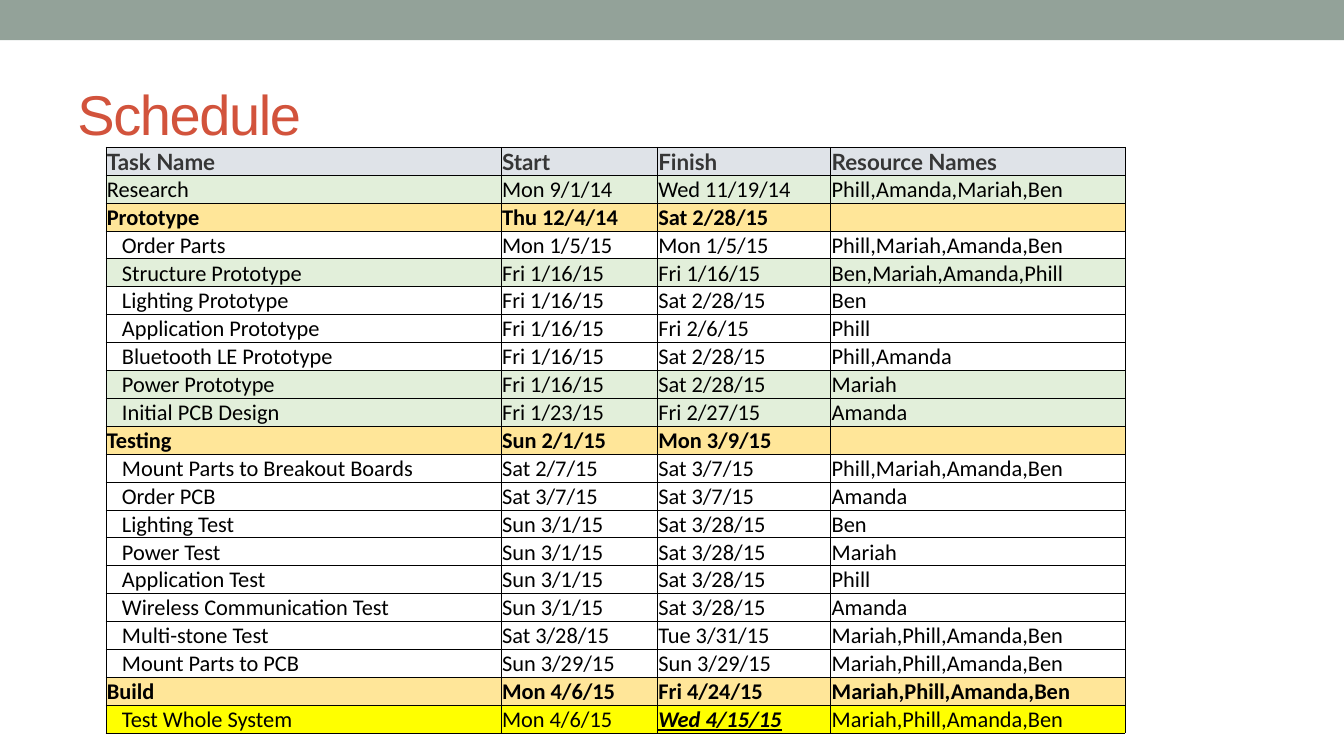
from dataclasses import dataclass

from lxml import etree
from pptx import Presentation
from pptx.dml.color import RGBColor
from pptx.enum.shapes import MSO_SHAPE
from pptx.enum.text import MSO_ANCHOR
from pptx.oxml.ns import qn
from pptx.util import Inches, Pt

RECT = MSO_SHAPE.RECTANGLE
MIDDLE = MSO_ANCHOR.MIDDLE

SAGE = RGBColor(0x93, 0xA2, 0x99)
RUST = RGBColor(0xD2, 0x53, 0x3C)
GRAY = RGBColor(0x36, 0x36, 0x36)
BLACK = RGBColor(0, 0, 0)
SILVER = RGBColor(0xDF, 0xE3, 0xE8)
GREEN = RGBColor(0xE2, 0xEF, 0xDA)
GOLD = RGBColor(0xFF, 0xE6, 0x99)
WHITE = RGBColor(0xFF, 0xFF, 0xFF)
YELLOW = RGBColor(0xFF, 0xFF, 0)

TEAM = "Mariah,Phill,Amanda,Ben"
PHILL_TEAM = "Phill,Mariah,Amanda,Ben"
WIDTHS = (3.92, 1.55, 1.72, 2.92)
PAD = 0.01
INDENT = 0.15


@dataclass(frozen=True)
class Task:
    name: str
    start: str
    finish: str
    people: str = ""
    fill: RGBColor = WHITE
    sub: bool = True
    bold: bool = False
    font: str = "Calibri"
    color: RGBColor = BLACK
    due: bool = False


def phase(name: str, start: str, finish: str, people: str = "") -> Task:
    return Task(name, start, finish, people, GOLD, sub=False, bold=True)


TASKS = (
    Task("Task Name", "Start", "Finish", "Resource Names", SILVER,
         sub=False, bold=True, font="Lato", color=GRAY),
    Task("Research", "Mon 9/1/14", "Wed 11/19/14", "Phill,Amanda,Mariah,Ben", GREEN, sub=False),
    phase("Prototype", "Thu 12/4/14", "Sat 2/28/15"),
    Task("Order Parts", "Mon 1/5/15", "Mon 1/5/15", PHILL_TEAM),
    Task("Structure Prototype", "Fri 1/16/15", "Fri 1/16/15", "Ben,Mariah,Amanda,Phill", GREEN),
    Task("Lighting Prototype", "Fri 1/16/15", "Sat 2/28/15", "Ben"),
    Task("Application Prototype", "Fri 1/16/15", "Fri 2/6/15", "Phill"),
    Task("Bluetooth LE Prototype", "Fri 1/16/15", "Sat 2/28/15", "Phill,Amanda"),
    Task("Power Prototype", "Fri 1/16/15", "Sat 2/28/15", "Mariah", GREEN),
    Task("Initial PCB Design", "Fri 1/23/15", "Fri 2/27/15", "Amanda", GREEN),
    phase("Testing", "Sun 2/1/15", "Mon 3/9/15"),
    Task("Mount Parts to Breakout Boards", "Sat 2/7/15", "Sat 3/7/15", PHILL_TEAM),
    Task("Order PCB", "Sat 3/7/15", "Sat 3/7/15", "Amanda"),
    Task("Lighting Test", "Sun 3/1/15", "Sat 3/28/15", "Ben"),
    Task("Power Test", "Sun 3/1/15", "Sat 3/28/15", "Mariah"),
    Task("Application Test", "Sun 3/1/15", "Sat 3/28/15", "Phill"),
    Task("Wireless Communication Test", "Sun 3/1/15", "Sat 3/28/15", "Amanda"),
    Task("Multi-stone Test", "Sat 3/28/15", "Tue 3/31/15", TEAM),
    Task("Mount Parts to PCB", "Sun 3/29/15", "Sun 3/29/15", TEAM),
    phase("Build", "Mon 4/6/15", "Fri 4/24/15", TEAM),
    Task("Test Whole System", "Mon 4/6/15", "Wed 4/15/15", TEAM, YELLOW, due=True),
)


def write(frame, text: str, *, size: int, font: str, color: RGBColor, bold: bool = False,
          accent: bool = False, space: int = 0) -> None:
    """Fill a text frame; accent means italic and underlined, space is in points."""
    para = frame.paragraphs[0]
    if not text:
        etree.SubElement(para._p, qn("a:endParaRPr"), sz=str(size * 100))
        return
    run = para.add_run()
    run.text = text
    style = run.font
    style.size, style.name, style.bold = Pt(size), font, bold
    style.italic = style.underline = accent
    style.color.rgb = color
    if space:
        run._r.get_or_add_rPr().set("spc", str(space * 100))


def outline(cell) -> None:
    """Draw a thin black border on all four sides; call it before the fill is set."""
    props = cell._tc.get_or_add_tcPr()
    for side in ("lnL", "lnR", "lnT", "lnB"):
        line = etree.SubElement(props, qn(f"a:{side}"), w=str(Pt(0.5)))
        fill = etree.SubElement(line, qn("a:solidFill"))
        etree.SubElement(fill, qn("a:srgbClr"), val=str(BLACK))


def fill_row(cells, task: Task) -> None:
    texts = (task.name, task.start, task.finish, task.people)
    for col, (cell, text) in enumerate(zip(cells, texts)):
        due = task.due and col == 2
        left = INDENT if task.sub and col == 0 else 0
        cell.margin_left = Inches(PAD + left)
        cell.margin_right = cell.margin_top = Inches(PAD)
        cell.margin_bottom = 0
        cell.vertical_anchor = MIDDLE
        outline(cell)
        cell.fill.solid()
        cell.fill.fore_color.rgb = task.fill
        write(cell.text_frame, text, size=16, font=task.font, color=task.color,
              bold=task.bold or due, accent=due)


def add_band(slide) -> None:
    band = slide.shapes.add_shape(RECT, 0, 0, Inches(13.33), Inches(0.4))
    band.shadow.inherit = False
    band.fill.solid()
    band.fill.fore_color.rgb = SAGE
    band.line.fill.background()


def add_title(slide) -> None:
    box = slide.shapes.add_textbox(Inches(0.67), Inches(0.58), Inches(12), Inches(1.08))
    frame = box.text_frame
    frame.word_wrap = True
    frame.vertical_anchor = MIDDLE
    write(frame, "Schedule", size=40, font="Arial", color=RUST, space=-1)


def add_plan(slide) -> None:
    table = slide.shapes.add_table(len(TASKS), len(WIDTHS), Inches(1.05), Inches(1.46),
                                   Inches(sum(WIDTHS)), Inches(5.78)).table
    table.horz_banding = False
    for column, width in zip(table.columns, WIDTHS):
        column.width = Inches(width)
    for row, task in zip(table.rows, TASKS):
        fill_row(row.cells, task)


def main() -> None:
    deck = Presentation()
    deck.slide_width, deck.slide_height = Inches(13.33), Inches(7.5)
    slide = deck.slides.add_slide(deck.slide_layouts[6])
    add_band(slide)
    add_title(slide)
    add_plan(slide)
    deck.save("out.pptx")


if __name__ == "__main__":
    main()
